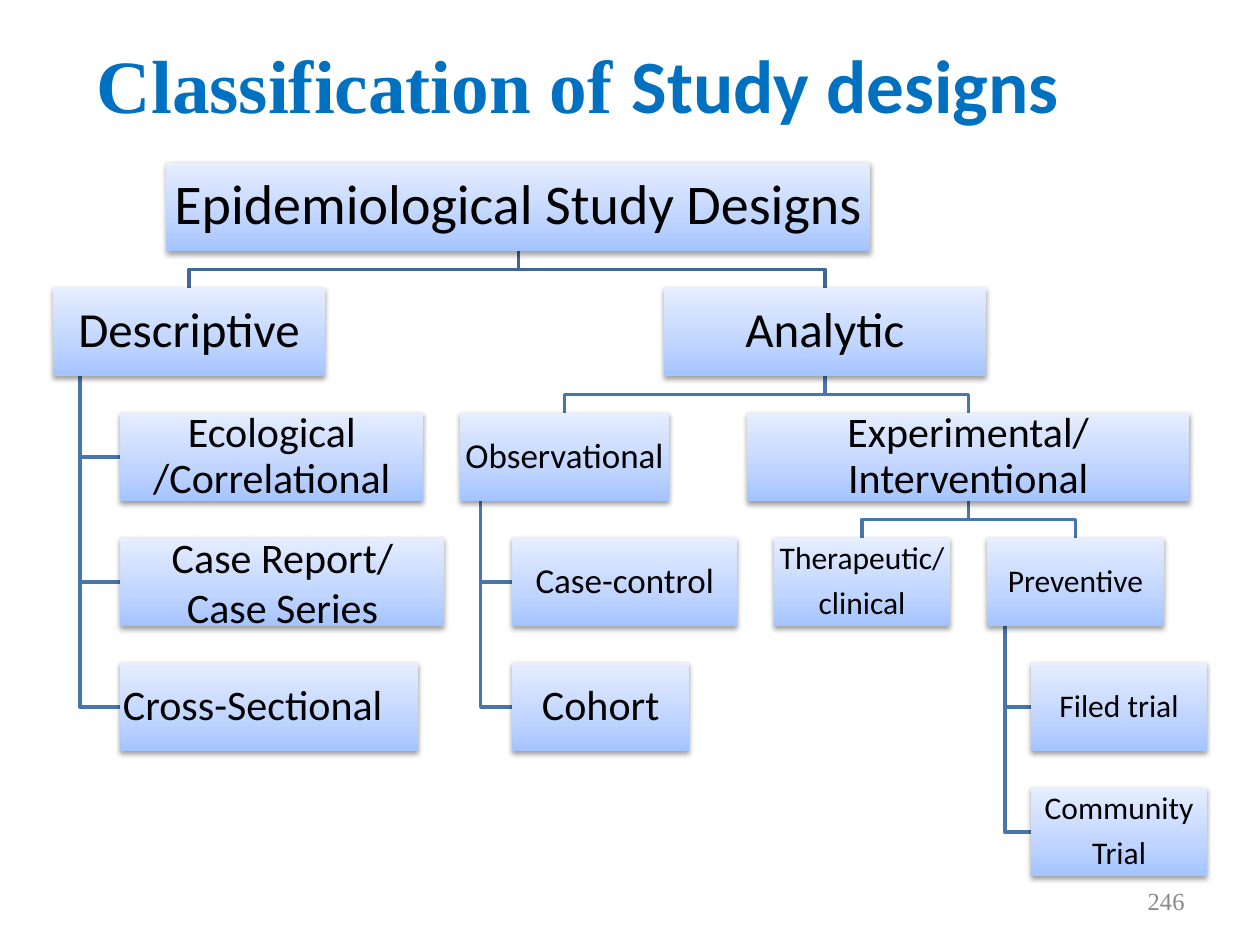
from copy import deepcopy
from lxml.etree import SubElement
from pptx import Presentation
from pptx.dml.color import RGBColor
from pptx.enum.shapes import MSO_SHAPE
from pptx.enum.text import MSO_ANCHOR, PP_ALIGN
from pptx.oxml.ns import qn
from pptx.util import Cm, Pt

BLACK = RGBColor(0x00, 0x00, 0x00)
TITLE_BLUE = RGBColor(0x00, 0x70, 0xC0)
GRAY = RGBColor(0x89, 0x89, 0x89)
TOP_LINE = RGBColor(0x3F, 0x67, 0x97)
LINE = RGBColor(0x48, 0x75, 0xAC)
GRADIENT = [(0, RGBColor(0xA4, 0xC4, 0xFF)),
            (0.35, RGBColor(0xBF, 0xD4, 0xFF)),
            (1, RGBColor(0xE6, 0xEE, 0xFF))]

TOP, STEP, BOX_H = 3.28, 2.52, 1.78

# name: (row, left, width, font size, lines), lengths in cm
BOXES = {
    "root": (0, 3.35, 14.2, 32, ["Epidemiological Study Designs"]),
    "descriptive": (1, 1.06, 5.5, 28, ["Descriptive"]),
    "ecological": (2, 2.43, 6.1, 24, ["Ecological", "/Correlational"]),
    "case report": (3, 2.43, 6.53, 24, ["Case Report/", "Case Series"]),
    "cross-sectional": (4, 2.43, 6, 24, ["Cross-Sectional"]),
    "analytic": (1, 13.39, 6.48, 28, ["Analytic"]),
    "observational": (2, 9.27, 4.22, 20, ["Observational"]),
    "case-control": (3, 10.33, 4.53, 20, ["Case-control"]),
    "cohort": (4, 10.33, 3.56, 24, ["Cohort"]),
    "experimental": (2, 15.06, 8.92, 24, ["Experimental/ Interventional"]),
    "therapeutic": (3, 15.6, 3.56, 18, ["Therapeutic/", "clinical"]),
    "preventive": (3, 19.9, 3.56, 18, ["Preventive"]),
    "field trial": (4, 20.78, 3.56, 18, ["Filed trial"]),
    "community trial": (5, 20.78, 3.56, 18, ["Community", "Trial"]),
}
# Parent: children side by side below it, or hanging from its left edge
BRANCHES = {"root": ["descriptive", "analytic"],
            "analytic": ["observational", "experimental"],
            "experimental": ["therapeutic", "preventive"]}
HANGING = {"descriptive": ["ecological", "case report", "cross-sectional"],
           "observational": ["case-control", "cohort"],
           "preventive": ["field trial", "community trial"]}

prs = Presentation()
prs.slide_width, prs.slide_height = Cm(25.4), Cm(19.05)
s = prs.slides.add_slide(prs.slide_layouts[5])


def add_line(points, color):
    points = [(Cm(x), Cm(y)) for x, y in points]
    fb = s.shapes.build_freeform(*points[0])
    fb.add_line_segments(points[1:], close=False)
    sp = fb.convert_to_shape()
    sp.shadow.inherit = False
    sp.fill.background()
    sp.line.color.rgb = color
    sp.line.width = Pt(2)


# Connecting lines
for parent, children in BRANCHES.items():
    row, left, width = BOXES[parent][:3]
    x, y = left + width / 2, TOP + row * STEP + BOX_H
    gap = STEP - BOX_H
    for child in children:
        cx = BOXES[child][1] + BOXES[child][2] / 2
        add_line([(x, y), (x, y + gap / 2), (cx, y + gap / 2), (cx, y + gap)],
                 TOP_LINE if parent == "root" else LINE)

for parent, children in HANGING.items():
    row, left, width = BOXES[parent][:3]
    x, y = left + width / 10, TOP + row * STEP + BOX_H
    for child in children:
        cy = TOP + BOXES[child][0] * STEP + BOX_H / 2
        add_line([(x, y), (x, cy), (BOXES[child][1], cy)], LINE)

# Boxes
for name, (row, left, width, size, lines) in BOXES.items():
    sp = s.shapes.add_shape(MSO_SHAPE.RECTANGLE, Cm(left), Cm(TOP + row * STEP),
                            Cm(width), Cm(BOX_H))
    sp.line.fill.background()
    sp.fill.gradient()
    sp.fill.gradient_angle = 90
    stops = sp._element.spPr.find(".//" + qn("a:gsLst"))
    stops.insert(1, deepcopy(stops[0]))
    for stop, (position, color) in zip(sp.fill.gradient_stops, GRADIENT):
        stop.position = position
        stop.color.rgb = color

    # Soft shadow below the box
    sp.shadow.inherit = False
    effects = sp._element.spPr.find(qn("a:effectLst"))
    shadow = SubElement(effects, qn("a:outerShdw"), blurRad="40000",
                        dist="20000", dir="5400000", rotWithShape="0")
    black = SubElement(shadow, qn("a:srgbClr"), val="000000")
    SubElement(black, qn("a:alpha"), val="38000")

    tf = sp.text_frame
    tf.word_wrap = True
    tf.vertical_anchor = MSO_ANCHOR.MIDDLE
    inset = Cm(0.05 if size > 20 else 0.03)
    tf.margin_left = tf.margin_right = tf.margin_top = tf.margin_bottom = inset
    for i, line in enumerate(lines):
        p = tf.paragraphs[0] if i == 0 else tf.add_paragraph()
        p.text = line
        p.alignment = PP_ALIGN.LEFT if name == "cross-sectional" else PP_ALIGN.CENTER
        p.line_spacing = 1.0 if name == "case report" else 0.9
        if size == 18 and i < len(lines) - 1:
            p.space_after = Pt(0.35 * size)
        p.font.size, p.font.name = Pt(size), "Calibri"
        p.font.color.rgb = BLACK

# Title
title = s.shapes.title
title.left, title.top, title.width, title.height = Cm(1.7), Cm(0.64), Cm(22.23), Cm(1.7)
tf = title.text_frame
tf.vertical_anchor = MSO_ANCHOR.TOP
p = tf.paragraphs[0]
p.alignment = PP_ALIGN.LEFT
p.font.size, p.font.bold = Pt(43), True
p.font.color.rgb = TITLE_BLUE
for text, font in [("Classification of ", "Times New Roman"), ("Study designs", "Calibri")]:
    r = p.add_run()
    r.text = text
    r.font.name = font

# Slide number
tb = s.shapes.add_textbox(Cm(18.2), Cm(17.66), Cm(5.93), Cm(1.01))
tf = tb.text_frame
tf.word_wrap = True
tf.vertical_anchor = MSO_ANCHOR.MIDDLE
p = tf.paragraphs[0]
p.text = "246"
p.alignment = PP_ALIGN.RIGHT
p.font.size, p.font.name = Pt(14), "Times New Roman"
p.font.color.rgb = GRAY

prs.save("out.pptx")
